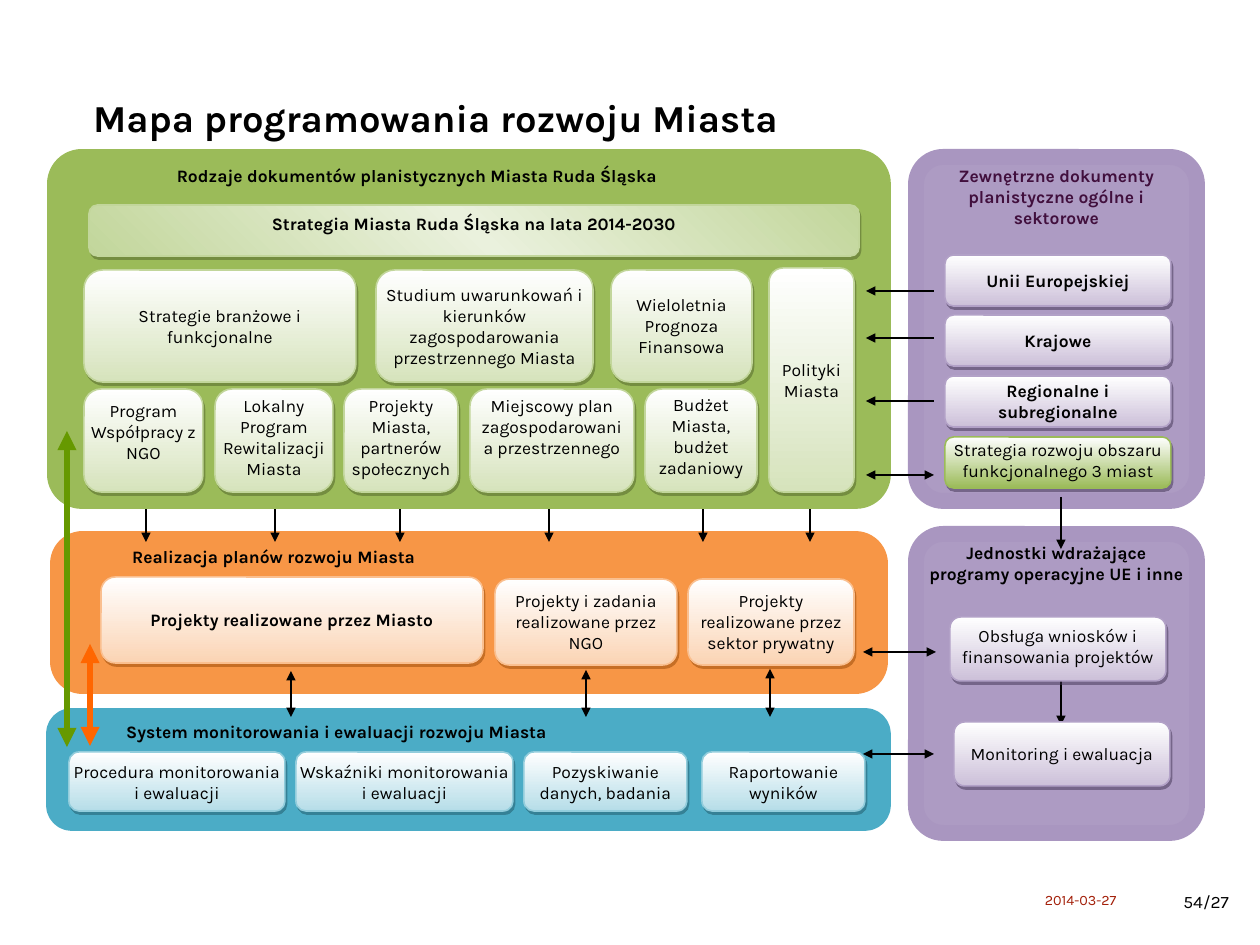
from dataclasses import dataclass

from lxml import etree
from pptx import Presentation
from pptx.dml.color import RGBColor
from pptx.enum.shapes import MSO_CONNECTOR, MSO_SHAPE
from pptx.enum.text import MSO_ANCHOR, MSO_AUTO_SIZE, PP_ALIGN
from pptx.oxml.ns import qn
from pptx.util import Emu, Pt

PX = 8000  # EMU in one px: the page of 28 by 21 cm is 1260 by 945 px
FONT = "Karla"
BLACK = "000000"
ROUND_RECT = MSO_SHAPE.ROUNDED_RECTANGLE
STRAIGHT = MSO_CONNECTOR.STRAIGHT
TOP, MIDDLE, BOTTOM = MSO_ANCHOR.TOP, MSO_ANCHOR.MIDDLE, MSO_ANCHOR.BOTTOM
LEFT, CENTER, RIGHT = PP_ALIGN.LEFT, PP_ALIGN.CENTER, PP_ALIGN.RIGHT
FIXED_SIZE = MSO_AUTO_SIZE.NONE
ROOMY, NARROW, SIDES, FLUSH = (11, 6, 11, 6), (2, 1, 2, 1), (2, 0, 2, 0), (0, 0, 0, 0)


@dataclass
class Palette:
    stops: tuple
    line: str
    shadow: str
    angle: int = 90


@dataclass
class Panel:
    text: str
    place: tuple
    fill: str
    line: str
    corner: float = 0.167
    insets: tuple = FLUSH
    align: int = LEFT
    color: str = BLACK
    opacity: int = 100


@dataclass
class Box:
    text: str
    place: tuple
    palette: Palette
    insets: tuple = ROOMY
    anchor: int = MIDDLE
    bold: bool = False


@dataclass
class Arrow:
    start: tuple
    end: tuple
    both: bool = False
    color: str = BLACK
    weight: float = 0.75


def px(length: int) -> Emu:
    return Emu(length * PX)


def rgb(color: str) -> RGBColor:
    return RGBColor.from_string(color)


def write(frame, text: str, *, size=11, color=BLACK, bold=False, align=CENTER,
          anchor=TOP, insets=FLUSH, spacing=None) -> None:
    frame.word_wrap = True
    frame.auto_size = FIXED_SIZE
    frame.vertical_anchor = anchor
    (frame.margin_left, frame.margin_top,
     frame.margin_right, frame.margin_bottom) = map(px, insets)
    frame.text = text
    for para in frame.paragraphs:
        para.alignment = align
        para.line_spacing = spacing
        for span in para.runs:
            span.font.name = FONT
            span.font.size = Pt(size)
            span.font.bold = bold
            span.font.color.rgb = rgb(color)


def add_round_rect(page, place: tuple, line: str, weight: float):
    shape = page.shapes.add_shape(ROUND_RECT, *map(px, place))
    shape.shadow.inherit = False
    shape.line.color.rgb = rgb(line)
    shape.line.width = Pt(weight)
    return shape


def add_color(parent, color: str, opacity: int = 100) -> None:
    element = etree.SubElement(parent, qn("a:srgbClr"), val=color)
    if opacity < 100:
        etree.SubElement(element, qn("a:alpha"), val=str(opacity * 1000))


def draw_panel(page, panel: Panel) -> None:
    shape = add_round_rect(page, panel.place, panel.line, 10)
    shape.adjustments[0] = panel.corner
    shape.fill.solid()
    shape.fill.fore_color.rgb = rgb(panel.fill)
    solid = shape._element.spPr.find(qn("a:solidFill"))
    solid.remove(solid[0])
    add_color(solid, panel.fill, panel.opacity)
    write(shape.text_frame, panel.text, bold=True, color=panel.color,
          align=panel.align, insets=panel.insets)


def draw_box(page, box: Box) -> None:
    palette = box.palette
    shape = add_round_rect(page, box.place, palette.line, 1)
    # Gradient with evenly spaced stops
    shape.fill.gradient()
    shape.fill.gradient_angle = 360 - palette.angle
    properties = shape._element.spPr
    stop_list = properties.find(qn("a:gradFill")).find(qn("a:gsLst"))
    for old_stop in list(stop_list):
        stop_list.remove(old_stop)
    for index, color in enumerate(palette.stops):
        position = 100000 * index // (len(palette.stops) - 1)
        add_color(etree.SubElement(stop_list, qn("a:gs"), pos=str(position)), color)
    # Hard shadow below and to the right
    shadow = etree.SubElement(properties.find(qn("a:effectLst")), qn("a:outerShdw"),
                              dist=str(Pt(2.2)), dir=str(63 * 60000),
                              algn="ctr", rotWithShape="0")
    add_color(shadow, palette.shadow, 50)
    write(shape.text_frame, box.text, bold=box.bold, anchor=box.anchor, insets=box.insets)


def draw_arrow(page, arrow: Arrow) -> None:
    connector = page.shapes.add_connector(STRAIGHT, *map(px, arrow.start + arrow.end))
    connector.line.color.rgb = rgb(arrow.color)
    connector.line.width = Pt(arrow.weight)
    outline = connector.line._get_or_add_ln()
    for tag in ("a:headEnd", "a:tailEnd") if arrow.both else ("a:tailEnd",):
        etree.SubElement(outline, qn(tag), type="triangle")
    etree.SubElement(connector._element.spPr, qn("a:effectLst"))


GREEN = Palette(("FFFFFF", "D6E3BC"), "C2D69B", "4E6128")
STRATEGY = Palette(("C2D69B", "EAF1DD", "C2D69B"), "C2D69B", "4E6128", 315)
BLUE = Palette(("FFFFFF", "B6DDE8"), "92CDDC", "205867")
ORANGE = Palette(("FFFFFF", "FBD4B4"), "FABF8F", "974706")
PURPLE = Palette(("FFFFFF", "CCC0D9"), "B2A1C7", "3F3151")
SUBREGION = Palette(("FFFFFF", "9BBB59"), "9BBB59", "3F3151")

LOWER_PANELS = [
    Panel("Jednostki wdrażające programy operacyjne UE i inne", (916, 534, 281, 299),
          "8064A2", "A996C0", 0.097, (3, 0, 3, 0), CENTER, opacity=64),
    Panel("System monitorowania i ewaluacji rozwoju Miasta", (54, 716, 829, 107),
          "4BACC6", "4BACC6", insets=(67, 0, 11, 0)),
    Panel("Realizacja planów rozwoju Miasta", (58, 539, 822, 147),
          "F79646", "F79646", insets=(67, 0, 11, 0)),
]
UPPER_PANELS = [
    Panel("Rodzaje dokumentów planistycznych Miasta Ruda Śląska", (55, 157, 828, 344),
          "9BBB59", "9BBB59", 0.078, (114, 0, 0, 0)),
    Panel("Zewnętrzne dokumenty planistyczne ogólne i sektorowe", (916, 157, 281, 344),
          "8064A2", "A996C0", 0.097, align=CENTER, color="410F3D", opacity=64),
]
BOXES = [
    # City planning documents
    Box("Strategia Miasta Ruda Śląska na lata 2014-2030", (89, 205, 770, 51), STRATEGY,
        anchor=TOP, bold=True),
    Box("Polityki Miasta", (769, 268, 85, 224), GREEN, (0, 6, 0, 6)),
    Box("Strategie branżowe i funkcjonalne", (84, 270, 272, 112), GREEN),
    Box("Studium uwarunkowań i kierunków zagospodarowania przestrzennego Miasta",
        (376, 270, 217, 112), GREEN, SIDES),
    Box("Wieloletnia Prognoza Finansowa", (611, 270, 141, 112), GREEN),
    Box("Program Współpracy z NGO", (84, 389, 119, 103), GREEN, (2, 6, 2, 6), TOP),
    Box("Lokalny Program Rewitalizacji Miasta", (215, 389, 118, 103), GREEN, NARROW, TOP),
    Box("Projekty\nMiasta, partnerów społecznych", (344, 389, 114, 103), GREEN, NARROW, TOP),
    Box("Miejscowy plan zagospodarowania przestrzennego", (470, 389, 164, 103), GREEN,
        NARROW, TOP),
    Box("Budżet Miasta, budżet zadaniowy", (645, 389, 112, 103), GREEN, SIDES, TOP),
    # Carrying out the plans
    Box("Projekty realizowane przez Miasto", (101, 577, 382, 86), ORANGE, bold=True),
    Box("Projekty i zadania realizowane przez NGO", (495, 579, 182, 86), ORANGE, SIDES),
    Box("Projekty realizowane przez sektor prywatny", (688, 579, 166, 86), ORANGE, SIDES),
    # Monitoring system
    Box("Procedura monitorowania i ewaluacji", (69, 752, 216, 59), BLUE, (0, 6, 0, 0), TOP),
    Box("Wskaźniki monitorowania i ewaluacji", (296, 752, 217, 59), BLUE, (0, 6, 0, 0), TOP),
    Box("Pozyskiwanie danych, badania", (524, 752, 163, 59), BLUE, anchor=TOP),
    Box("Raportowanie wyników", (702, 752, 163, 59), BLUE, anchor=TOP),
    # External documents and units
    Box("Unii Europejskiej", (945, 255, 226, 51), PURPLE, bold=True),
    Box("Krajowe", (945, 315, 226, 51), PURPLE, bold=True),
    Box("Regionalne i subregionalne", (945, 376, 226, 51), PURPLE, FLUSH, bold=True),
    Box("Strategia rozwoju obszaru funkcjonalnego 3 miast", (945, 437, 226, 51), SUBREGION,
        FLUSH, TOP),
    Box("Obsługa wniosków i finansowania projektów", (950, 617, 216, 64), PURPLE, (0, 0, 0, 5)),
    Box("Monitoring i ewaluacja", (954, 722, 216, 64), PURPLE),
]
BACK_ARROWS = [Arrow((x, 490), (x, 542)) for x in (146, 275, 400, 549, 703, 810)] + [
    Arrow((1061, 656), (1061, 725))]
FRONT_ARROWS = [Arrow((934, y), (866, y)) for y in (291, 338, 401)] + [
    Arrow((x, y), (x, 717), True) for x, y in ((291, 671), (586, 670), (770, 669))] + [
    Arrow((866, 475), (934, 475), True),
    Arrow((863, 652), (936, 652), True),
    Arrow((863, 754), (934, 754), True),
    Arrow((1061, 497), (1061, 549)),
    Arrow((90, 644), (90, 746), True, "FF6600", 4),
    Arrow((67, 431), (67, 747), True, "669900", 4),
]


def main() -> None:
    deck = Presentation()
    deck.slide_width, deck.slide_height = px(1260), px(945)
    page = deck.slides.add_slide(deck.slide_layouts[5])

    # Title
    title = page.shapes.title
    title.left, title.top, title.width, title.height = map(px, (93, 27, 902, 113))
    write(title.text_frame, "Mapa programowania rozwoju Miasta", size=24, bold=True,
          align=LEFT, anchor=BOTTOM, spacing=1.3)

    # Panels, with the arrows that start behind other shapes
    for panel in LOWER_PANELS:
        draw_panel(page, panel)
    for arrow in BACK_ARROWS:
        draw_arrow(page, arrow)
    for panel in UPPER_PANELS:
        draw_panel(page, panel)

    # Boxes and the arrows in front
    for box in BOXES:
        draw_box(page, box)
    for arrow in FRONT_ARROWS:
        draw_arrow(page, arrow)

    # Date and page number
    date = page.shapes.add_textbox(*map(px, (1045, 885, 109, 30)))
    write(date.text_frame, "2014-03-27", size=9, color="A31F09", align=LEFT, anchor=MIDDLE)
    number = page.shapes.add_textbox(*map(px, (1164, 884, 78, 46)))
    write(number.text_frame, "54/27", align=RIGHT, insets=(13, 7, 13, 7))

    deck.save("out.pptx")


if __name__ == "__main__":
    main()
